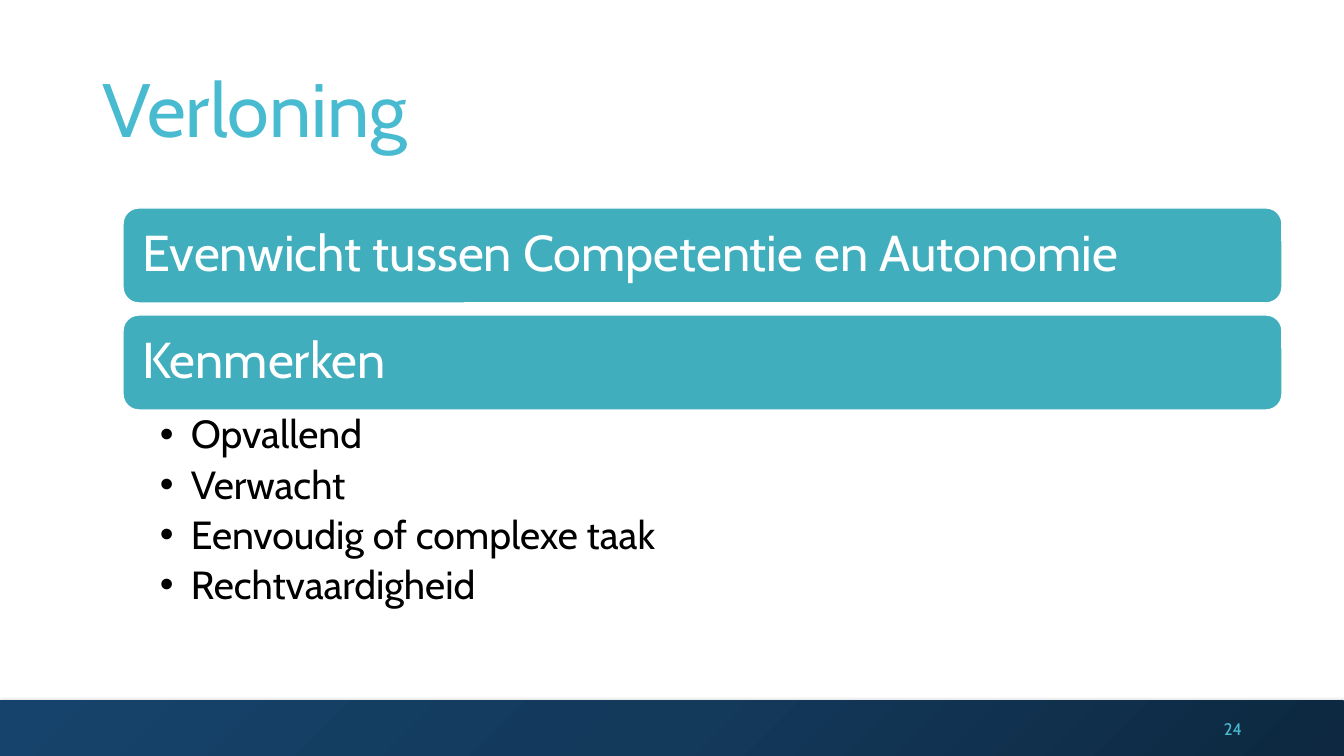
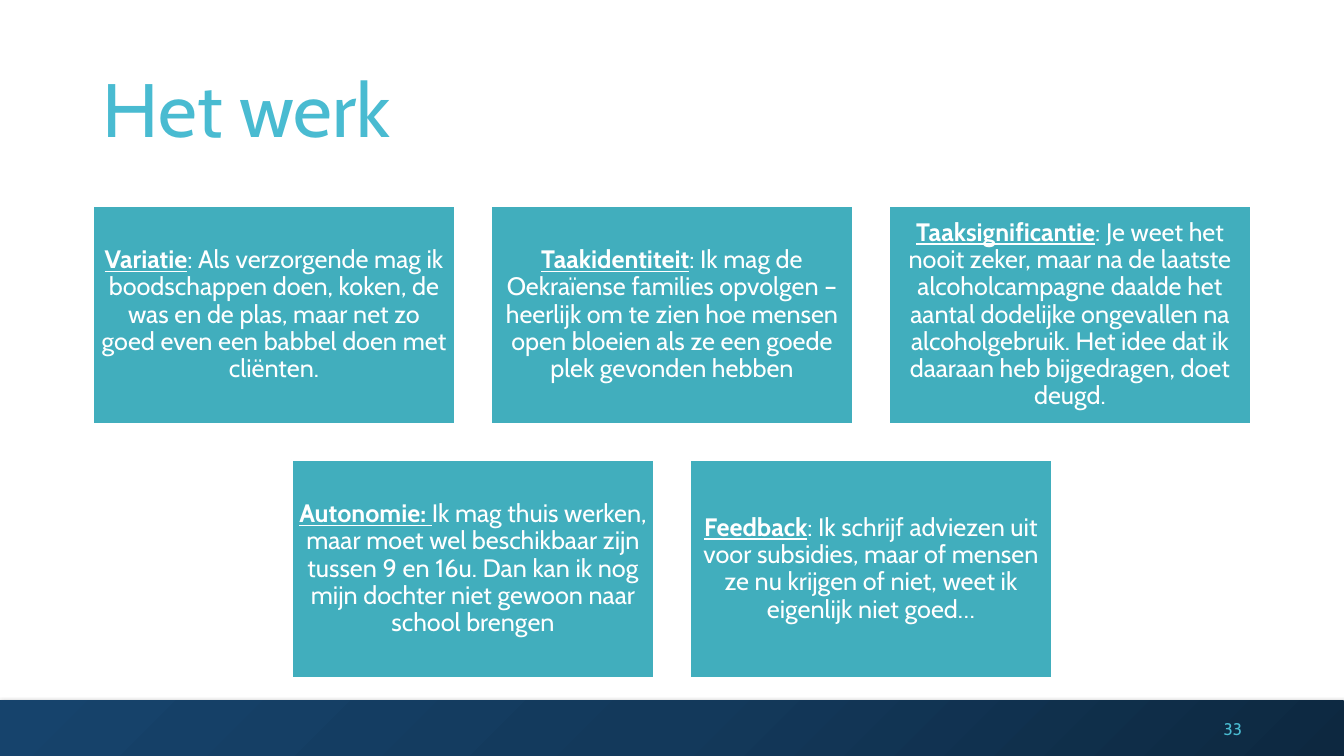
from copy import deepcopy

from lxml import etree
from pptx import Presentation
from pptx.dml.color import RGBColor
from pptx.enum.shapes import MSO_SHAPE as Shape
from pptx.enum.text import MSO_ANCHOR as Anchor, PP_ALIGN as Align
from pptx.oxml.ns import qn
from pptx.util import Emu, Pt

# Shared look
WIDTH, HEIGHT = 1344, 756
SCALE = 12192000 / WIDTH
FONT = "Cabin"
TITLE, TEAL, WHITE, BLACK = "49BBD1", "41AEBD", "FFFFFF", "000000"
BAND = [(0, "0D2840"), (0.5, "13395B"), (1, "16436C")]
LEFT, SPAN = 93, 1159

# Content
BARS = ["Evenwicht tussen Competentie en Autonomie", "Kenmerken"]
POINTS = ["Opvallend", "Verwacht", "Eenvoudig of complexe taak",
          "Rechtvaardigheid"]
CARDS = [
    [("Variatie", ": Als verzorgende mag ik boodschappen doen, koken, de was "
      "en de plas, maar net zo goed even een babbel doen met cliënten."),
     ("Taakidentiteit", ": Ik mag de Oekraïense families opvolgen – heerlijk "
      "om te zien hoe mensen open bloeien als ze een goede plek gevonden "
      "hebben"),
     ("Taaksignificantie", ": Je weet het nooit zeker, maar na de laatste "
      "alcoholcampagne daalde het aantal dodelijke ongevallen na "
      "alcoholgebruik. Het idee dat ik daaraan heb bijgedragen, doet "
      "deugd.")],
    [("Autonomie: ", "Ik mag thuis werken, maar moet wel beschikbaar zijn "
      "tussen 9 en 16u. Dan kan ik nog mijn dochter niet gewoon naar school "
      "brengen"),
     ("Feedback", ": Ik schrijf adviezen uit voor subsidies, maar of mensen "
      "ze nu krijgen of niet, weet ik eigenlijk niet goed…")],
]


def px(num):
    return Emu(round(num * SCALE))


def rgb(code):
    return RGBColor.from_string(code)


def style(para, size, color, align=Align.LEFT, lines=0.9):
    para.alignment = align
    para.line_spacing = lines
    para.font.name = FONT
    para.font.size = Pt(size)
    para.font.color.rgb = rgb(color)


def setup(frame, pads, anchor=Anchor.MIDDLE):
    frame.word_wrap = True
    frame.vertical_anchor = anchor
    (frame.margin_left, frame.margin_top,
     frame.margin_right, frame.margin_bottom) = map(px, pads)
    return frame


def label(slide, box, text, size, color, **look):
    area = slide.shapes.add_textbox(*map(px, box))
    para = setup(area.text_frame, (10, 5, 10, 5)).paragraphs[0]
    para.text = text
    style(para, size, color, **look)


def panel(slide, kind, box, pad):
    """Teal shape with a white edge; returns its first paragraph."""
    shape = slide.shapes.add_shape(kind, *map(px, box))
    shape.shadow.inherit = False
    shape.fill.solid()
    shape.fill.fore_color.rgb = rgb(TEAL)
    shape.line.color.rgb = rgb(WHITE)
    shape.line.width = Pt(1)
    return setup(shape.text_frame, [pad] * 4).paragraphs[0]


def band(slide):
    top = 701
    shape = slide.shapes.add_shape(
        Shape.RECTANGLE, *map(px, (0, top, WIDTH, HEIGHT - top)))
    shape.line.fill.background()
    shape.fill.gradient()
    shape.fill.gradient_angle = 135
    props = shape._element.spPr
    stops = props.find(".//" + qn("a:gsLst"))
    stops.append(deepcopy(stops[0]))
    for stop, (place, color) in zip(shape.fill.gradient_stops, BAND):
        stop.position = place
        stop.color.rgb = rgb(color)
    # Soft shadow straight down
    shape.shadow.inherit = False
    shade = etree.SubElement(
        props.find(qn("a:effectLst")), qn("a:outerShdw"),
        blurRad=str(Pt(4.5)), dist=str(Pt(1.5)), dir="5400000",
        rotWithShape="0")
    tint = etree.SubElement(shade, qn("a:srgbClr"), val=BLACK)
    etree.SubElement(tint, qn("a:alpha"), val="63000")


def start(deck, title, number):
    """Slide with band, title and page number."""
    slide = deck.slides.add_slide(deck.slide_layouts[6])
    band(slide)
    label(slide, (LEFT, 40, SPAN, 146), title, 54, TITLE)
    label(slide, (950, 709, 302, 40), str(number), 12, TITLE,
          align=Align.RIGHT, lines=1)
    return slide


def bar(slide, box, text):
    para = panel(slide, Shape.ROUNDED_RECTANGLE, box, 15)
    para.text = text
    style(para, 36, WHITE)


def bullets(slide, box, items):
    area = slide.shapes.add_textbox(*map(px, box))
    frame = setup(area.text_frame, (37, 5, 28, 5), Anchor.TOP)
    for num, item in enumerate(items):
        para = frame.add_paragraph() if num else frame.paragraphs[0]
        para.text = item
        para.space_after = Pt(5.6)
        props = para._p.get_or_add_pPr()
        props.set("marL", str(px(31)))
        props.set("indent", str(-px(31)))
        etree.SubElement(props, qn("a:buFont"), typeface="Arial")
        etree.SubElement(props, qn("a:buChar"), char="•")
        style(para, 28, BLACK)


def card(slide, box, head, body):
    para = panel(slide, Shape.RECTANGLE, box, 7)
    style(para, 18, WHITE, Align.CENTER)
    lead = para.add_run()
    lead.text = head
    lead.font.bold = lead.font.underline = True
    para.add_run().text = body


def reward(deck):
    slide = start(deck, "Verloning", 24)
    left, top, high, step = 123, 208, 95, 107
    for num, text in enumerate(BARS):
        bar(slide, (left, top + num * step, SPAN, high), text)
    bullets(slide, (left, 410, SPAN, 214), POINTS)


def work(deck):
    slide = start(deck, "Het werk", 33)
    top, wide, high, gap = 206, 362, 218, 36
    for row, cards in enumerate(CARDS):
        # Each row is centred on the slide
        left = (WIDTH - len(cards) * (wide + gap) + gap) // 2
        for col, (head, body) in enumerate(cards):
            box = (left + col * (wide + gap), top + row * (high + gap),
                   wide, high)
            card(slide, box, head, body)


def main():
    deck = Presentation()
    deck.slide_width, deck.slide_height = px(WIDTH), px(HEIGHT)
    reward(deck)
    work(deck)
    deck.save("out.pptx")


if __name__ == "__main__":
    main()
